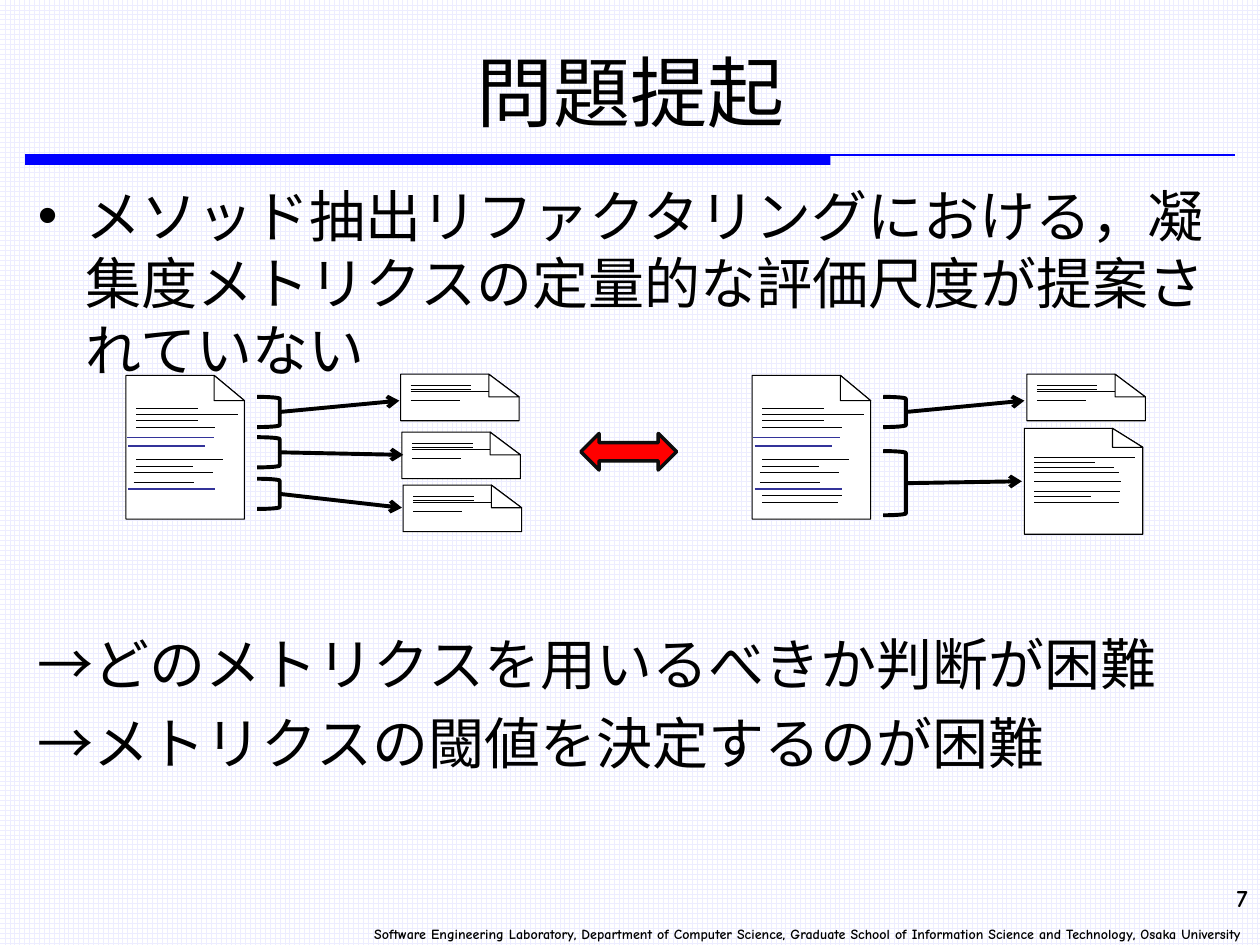
from lxml import etree
from pptx import Presentation
from pptx.dml.color import RGBColor
from pptx.enum.dml import MSO_PATTERN
from pptx.enum.shapes import MSO_CONNECTOR, MSO_SHAPE
from pptx.enum.text import MSO_ANCHOR, MSO_AUTO_SIZE, PP_ALIGN
from pptx.oxml.ns import qn
from pptx.util import Inches, Pt

STRAIGHT = MSO_CONNECTOR.STRAIGHT
RECTANGLE = MSO_SHAPE.RECTANGLE
BRACKET = MSO_SHAPE.RIGHT_BRACKET
DOUBLE_ARROW = MSO_SHAPE.LEFT_RIGHT_ARROW

BLACK = RGBColor(0x00, 0x00, 0x00)
WHITE = RGBColor(0xFF, 0xFF, 0xFF)
BLUE = RGBColor(0x00, 0x00, 0xFF)
INDIGO = RGBColor(0x33, 0x33, 0x99)
RED = RGBColor(0xFF, 0x00, 0x00)
NEAR_BLACK = RGBColor(0x0D, 0x0D, 0x0D)
GRID = RGBColor(0xED, 0xED, 0xFF)

THIN, MEDIUM, THICK = 0.63, 0.75, 2.25
BRACKET_WIDTH = 0.18

# Lines of text on a sheet: start, end and height, from its top left corner
SOURCE_LINES = [
    (0.08, 0.89, 0.31), (0.08, 0.57, 0.36), (0.08, 0.71, 0.41),
    (0.08, 0.77, 0.67), (0.08, 0.53, 0.72), (0.08, 0.57, 0.26),
    (0.06, 0.54, 0.85), (0.06, 0.69, 0.77),
]
MARKED_LINES = [(0.01, 0.7, 0.49), (0.02, 0.63, 0.56), (0.02, 0.71, 0.9)]
EXTRA_LINES = [(0.08, 0.68, 1.01), (0.08, 0.71, 0.95)]
SLIP_LINES = [(0.08, 0.47, 0.21), (0.08, 0.56, 0.12),
              (0.08, 0.7, 0.14), (0.08, 0.56, 0.09)]
LONG_LINES = [
    (0.08, 0.88, 0.23), (0.08, 0.56, 0.27), (0.08, 0.71, 0.31),
    (0.08, 0.76, 0.5), (0.08, 0.53, 0.54),
]
LONG_EXTRA_LINES = [(0.08, 0.77, 0.42), (0.08, 0.75, 0.35), (0.08, 0.75, 0.59)]


def place(shape, left, top, width, height):
    values = {"left": left, "top": top, "width": width, "height": height}
    for name, value in values.items():
        setattr(shape, name, Inches(value))


def format_font(para, size, name="Arial", bold=False):
    values = {"size": Pt(size), "name": name, "bold": bold}
    for key, value in values.items():
        setattr(para.font, key, value)
    para.font.color.rgb = BLACK


def style_shape(shape, fill=None, line=None, weight=THIN):
    shape.shadow.inherit = False
    if fill is None:
        shape.fill.background()
    else:
        shape.fill.solid()
        shape.fill.fore_color.rgb = fill
    if line is None:
        shape.line.fill.background()
    else:
        shape.line.color.rgb = line
        shape.line.width = Pt(weight)


def add_preset(page, kind, at, **style):
    shape = page.shapes.add_shape(kind, *map(Inches, at))
    style_shape(shape, **style)
    return shape


def add_line(page, start, end, color=BLACK, weight=THIN, arrow=False):
    line = page.shapes.add_connector(STRAIGHT, *map(Inches, (*start, *end)))
    line.line.color.rgb = color
    line.line.width = Pt(weight)
    if arrow:
        etree.SubElement(line.line._get_or_add_ln(), qn("a:tailEnd"), type="arrow")
    etree.SubElement(line._element.spPr, qn("a:effectLst"))


def add_polygon(page, points):
    first, *others = [tuple(map(Inches, point)) for point in points]
    builder = page.shapes.build_freeform(*first, scale=1)
    builder.add_line_segments(others, close=True)
    style_shape(builder.convert_to_shape(), fill=WHITE, line=BLACK)


def add_sheet(page, left, top, height, fold_height):
    """Draw a paper outline with its top right corner folded down."""
    right, bottom = left + 0.94, top + height
    fold_left, fold_bottom = right - 0.24, top + fold_height
    add_polygon(page, [(left, top), (left, bottom), (right, bottom),
                       (right, fold_bottom), (fold_left, top)])
    add_polygon(page, [(fold_left, top), (right, fold_bottom),
                       (fold_left, fold_bottom)])


def add_text_lines(page, left, top, lines, **style):
    for start, end, height in lines:
        y = top + height
        add_line(page, (left + start, y), (left + end, y), **style)


def add_source(page, left, top):
    add_sheet(page, left, top, 1.14, 0.2)
    add_text_lines(page, left, top, SOURCE_LINES)
    add_text_lines(page, left, top, MARKED_LINES, color=INDIGO, weight=MEDIUM)


def add_slip(page, left, top):
    add_sheet(page, left, top, 0.37, 0.18)
    add_text_lines(page, left, top, SLIP_LINES)


def add_extraction(page, left, top, height, target):
    """Bracket some source lines and point from them to the new method."""
    add_preset(page, BRACKET, (left, top, BRACKET_WIDTH, height),
               line=BLACK, weight=THICK)
    middle = (left + BRACKET_WIDTH, top + height / 2)
    add_line(page, middle, target, weight=THICK, arrow=True)


def add_label(page, text, at, size):
    box = page.shapes.add_textbox(*map(Inches, at))
    box.text_frame.word_wrap = True
    para = box.text_frame.paragraphs[0]
    para.text = text
    para.alignment = PP_ALIGN.RIGHT
    format_font(para, size, "Comic Neue", True)


def fill_title(page):
    title = page.shapes.title
    place(title, 0.2, 0.21, 9.61, 1.02)
    frame = title.text_frame
    frame.text = "問題提起"
    frame.vertical_anchor = MSO_ANCHOR.MIDDLE
    frame.auto_size = MSO_AUTO_SIZE.NONE
    frame.paragraphs[0].alignment = PP_ALIGN.CENTER
    format_font(frame.paragraphs[0], 44)


def fill_body(page):
    items = [
        ("メソッド抽出リファクタリングにおける，凝集度メトリクスの定量的な評価尺度が提案されていない", "•", 0),
        ("→どのメトリクスを用いるべきか判断が困難", None, 141),
        ("→メトリクスの閾値を決定するのが困難", None, 6.4),
    ]
    body = page.placeholders[1]
    place(body, 0.2, 1.39, 9.61, 5.51)
    frame = body.text_frame
    frame.auto_size = MSO_AUTO_SIZE.NONE
    for index, (text, bullet, space) in enumerate(items):
        para = frame.add_paragraph() if index else frame.paragraphs[0]
        para.text = text
        para.space_before = Pt(space)
        properties = para._p.get_or_add_pPr()
        properties.set("marL", str(Inches(0.38)))
        properties.set("indent", str(Inches(-0.38)))
        if bullet:
            etree.SubElement(properties, qn("a:buChar"), char=bullet)
        else:
            etree.SubElement(properties, qn("a:buNone"))
        format_font(para, 32)


def main():
    deck = Presentation()
    deck.slide_width, deck.slide_height = Inches(10), Inches(7.5)
    page = deck.slides.add_slide(deck.slide_layouts[1])
    background = page.background.fill
    background.patterned()
    background.pattern = MSO_PATTERN.LARGE_GRID
    background.fore_color.rgb = GRID
    background.back_color.rgb = WHITE

    add_preset(page, RECTANGLE, (0.2, 1.23, 6.39, 0.08), fill=BLUE)
    add_line(page, (0.2, 1.23), (9.8, 1.23), BLUE, MEDIUM)
    add_label(page, "7", (9.49, 6.96, 0.51, 0.28), 14)
    add_label(page, "Software Engineering Laboratory, Department of Computer Science, Graduate School of Information Science and Technology, Osaka University",
              (1.89, 7.3, 8.07, 0.23), 8)
    fill_title(page)
    fill_body(page)

    add_source(page, 1, 2.98)
    for left, top in [(3.18, 2.97), (3.19, 3.43), (3.2, 3.85), (8.15, 2.97)]:
        add_slip(page, left, top)
    add_source(page, 5.97, 2.98)
    add_text_lines(page, 5.97, 2.98, EXTRA_LINES, weight=MEDIUM)
    add_sheet(page, 8.13, 3.4, 0.84, 0.15)
    add_text_lines(page, 8.13, 3.4, LONG_LINES)
    add_text_lines(page, 8.13, 3.4, LONG_EXTRA_LINES, weight=MEDIUM)

    extractions = [
        (2.04, 3.15, 0.24, (3.17, 3.18)), (2.04, 3.47, 0.24, (3.2, 3.61)),
        (2.04, 3.8, 0.24, (3.19, 4.03)), (7.01, 3.15, 0.24, (8.13, 3.18)),
        (7.01, 3.58, 0.51, (8.11, 3.82)),
    ]
    for extraction in extractions:
        add_extraction(page, *extraction)
    add_preset(page, DOUBLE_ARROW, (4.61, 3.44, 0.76, 0.29),
               fill=RED, line=NEAR_BLACK, weight=2)
    deck.save("out.pptx")


if __name__ == "__main__":
    main()
